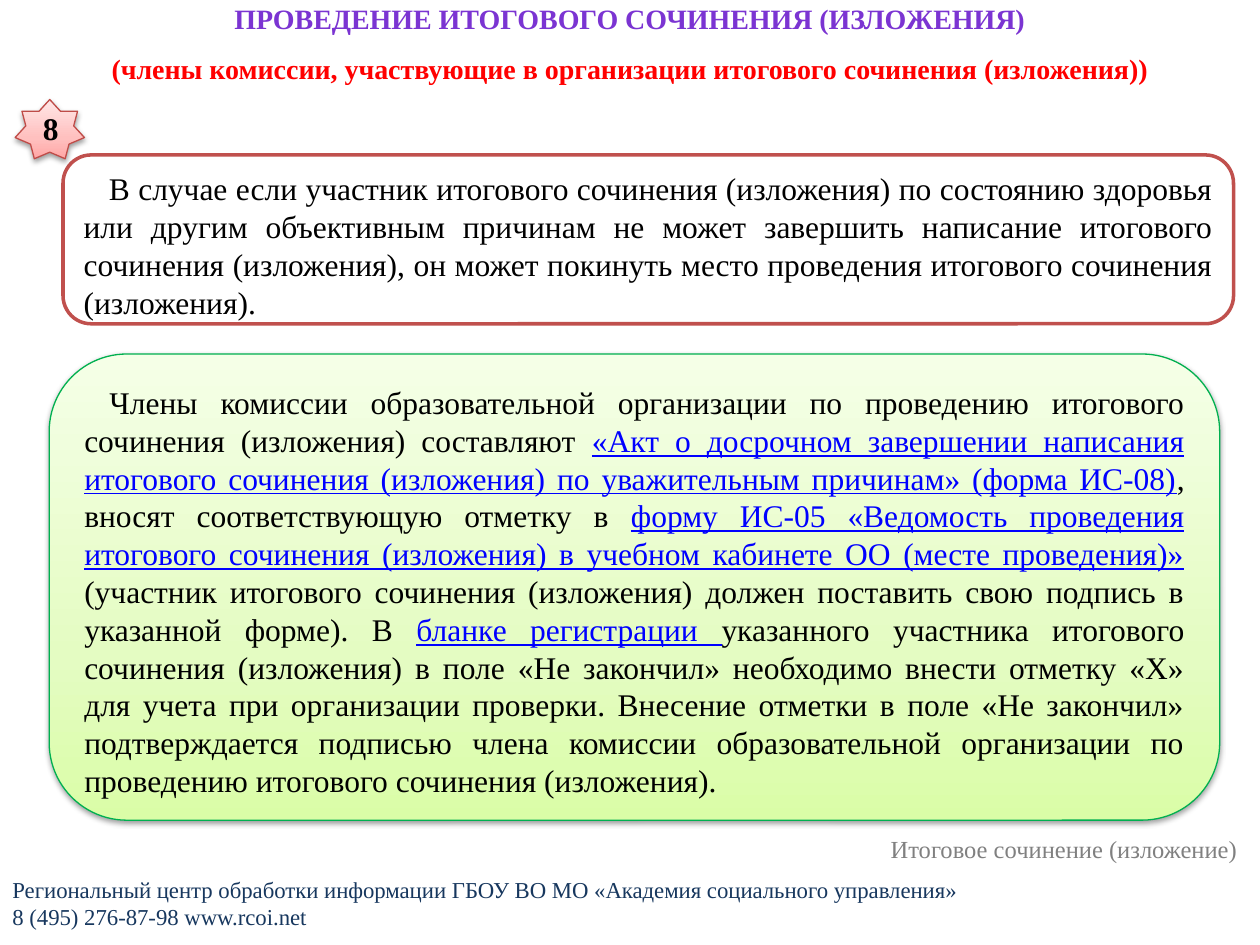
from lxml.etree import SubElement
from pptx import Presentation
from pptx.dml.color import RGBColor
from pptx.enum.shapes import MSO_SHAPE
from pptx.enum.text import MSO_ANCHOR, PP_ALIGN
from pptx.oxml.ns import qn
from pptx.util import Inches, Pt

BLACK = RGBColor(0x00, 0x00, 0x00)
WHITE = RGBColor(0xFF, 0xFF, 0xFF)
VIOLET = RGBColor(0x7B, 0x34, 0xD2)
RED = RGBColor(0xFF, 0x00, 0x00)
LINK_BLUE = RGBColor(0x00, 0x00, 0xFF)
NAVY = RGBColor(0x17, 0x37, 0x5E)
GRAY = RGBColor(0x80, 0x80, 0x80)
BRICK = RGBColor(0xC0, 0x50, 0x4D)
BADGE_EDGE = RGBColor(0xBF, 0x4C, 0x48)
GREEN = RGBColor(0x00, 0xB0, 0x50)
PINK_STOPS = [(0, "FFA6A5"), (35, "FFC0BF"), (100, "FFE7E7")]
LIME_STOPS = [(0, "DAFDA7"), (35, "E4FCC2"), (100, "F5FFE7")]

PLAIN = {"size": Pt(18), "color": BLACK}
FORM = {"size": Pt(18), "color": LINK_BLUE, "underline": True}
BADGE = {"size": Pt(18), "color": BLACK, "bold": True}
HEADING = {"size": Pt(16), "color": VIOLET, "bold": True}
SUBHEADING = {"size": Pt(16), "color": RED, "bold": True}
CONTACT = {"size": Pt(13), "color": NAVY}
TOPIC = {"size": Pt(14), "color": GRAY}

# Each text part: place (left, top, width, height), runs, paragraph settings, anchor
TEXTS = [
    ((0, 6.9, 8.61, 0.55),
     [("Региональный центр обработки информации ГБОУ ВО МО «Академия социального управления»\v"
       "8 (495) 276-87-98 www.rcoi.net", CONTACT)],
     {}, MSO_ANCHOR.TOP),
    ((6.97, 6.57, 2.99, 0.34),
     [("Итоговое сочинение (изложение)", TOPIC)],
     {}, MSO_ANCHOR.TOP),
    ((0.5, -0.07, 9, 0.7),
     [("ПРОВЕДЕНИЕ ИТОГОВОГО СОЧИНЕНИЯ (ИЗЛОЖЕНИЯ)\v", HEADING),
      ("(члены комиссии, участвующие в организации итогового сочинения (изложения))", SUBHEADING)],
     {"alignment": PP_ALIGN.CENTER, "line_spacing": 1.5}, MSO_ANCHOR.MIDDLE),
]

CASE = [
    ("В случае если участник итогового сочинения (изложения) по состоянию здоровья или другим "
     "объективным причинам не может завершить написание итогового сочинения (изложения), он может "
     "покинуть место проведения итогового сочинения (изложения).", PLAIN),
]
ACTIONS = [
    ("Члены комиссии образовательной организации по проведению итогового сочинения (изложения) "
     "составляют ", PLAIN),
    ("«Акт о досрочном завершении написания итогового сочинения (изложения) по уважительным "
     "причинам» (форма ИС-08)", FORM),
    (", вносят соответствующую отметку в ", PLAIN),
    ("форму ИС-05 «Ведомость проведения итогового сочинения (изложения) в учебном кабинете ОО "
     "(месте проведения)»", FORM),
    (" (участник итогового сочинения (изложения) должен поставить свою подпись в указанной форме). "
     "В ", PLAIN),
    ("бланке регистрации ", FORM),
    ("указанного участника итогового сочинения (изложения) в поле «Не закончил» необходимо внести "
     "отметку «Х» для учета при организации проверки. Внесение отметки в поле «Не закончил» "
     "подтверждается подписью члена комиссии образовательной организации по проведению итогового "
     "сочинения (изложения).", PLAIN),
]


def write(part, runs, settings, anchor, indent=0):
    frame = part.text_frame
    frame.word_wrap = True
    frame.vertical_anchor = anchor
    paragraph = frame.paragraphs[0]
    for name, value in settings.items():
        setattr(paragraph, name, value)
    if indent:
        properties = paragraph._p.get_or_add_pPr()
        properties.set("marL", "0")
        properties.set("indent", str(Inches(indent)))
    for text, style in runs:
        pieces = text.split("\v")
        for number, piece in enumerate(pieces):
            if number:
                paragraph.add_line_break()
            if piece:
                run = paragraph.add_run()
                run.text = piece
                run.font.name = "Times New Roman"
                for name, value in style.items():
                    if name == "color":
                        run.font.color.rgb = value
                    else:
                        setattr(run.font, name, value)


def fill_upward(shape, stops):
    """Fill with a gradient whose first stop is at the bottom."""
    shape.fill.gradient()
    shape.fill.gradient_angle = 90
    stop_list = shape._element.spPr.find(qn("a:gradFill")).find(qn("a:gsLst"))
    for old in list(stop_list):
        stop_list.remove(old)
    for percent, color in stops:
        stop = SubElement(stop_list, qn("a:gs"), pos=str(percent * 1000))
        SubElement(stop, qn("a:srgbClr"), val=color)


def drop_shadow(shape):
    effects = shape._element.spPr.find(qn("a:effectLst"))
    shadow = SubElement(effects, qn("a:outerShdw"), blurRad=str(Pt(3.1)), dist=str(Pt(1.6)),
                        dir="5400000", rotWithShape="0")
    color = SubElement(shadow, qn("a:srgbClr"), val="000000")
    SubElement(color, qn("a:alpha"), val="38000")


def add_panel(slide, preset, place, edge, edge_width, stops=None):
    """Add an outlined shape: white, or with a gradient and a shadow."""
    panel = slide.shapes.add_shape(preset, *map(Inches, place))
    panel.shadow.inherit = False
    panel.line.color.rgb = edge
    panel.line.width = Pt(edge_width)
    if stops:
        fill_upward(panel, stops)
        drop_shadow(panel)
    else:
        panel.fill.solid()
        panel.fill.fore_color.rgb = WHITE
    return panel


def main():
    deck = Presentation()
    deck.slide_width, deck.slide_height = Inches(10), Inches(7.5)
    slide = deck.slides.add_slide(deck.slide_layouts[6])

    for place, runs, settings, anchor in TEXTS:
        write(slide.shapes.add_textbox(*map(Inches, place)), runs, settings, anchor)

    justified = {"alignment": PP_ALIGN.JUSTIFY}
    centered = {"alignment": PP_ALIGN.CENTER}
    rounded = MSO_SHAPE.ROUNDED_RECTANGLE
    case = add_panel(slide, rounded, (0.5, 1.23, 9.29, 1.34), BRICK, 2)
    write(case, CASE, justified, MSO_ANCHOR.TOP, indent=0.2)
    badge = add_panel(slide, MSO_SHAPE.STAR_7_POINT, (0.12, 0.79, 0.55, 0.47),
                      BADGE_EDGE, 0.75, PINK_STOPS)
    write(badge, [("8", BADGE)], centered, MSO_ANCHOR.MIDDLE)
    actions = add_panel(slide, rounded, (0.39, 2.81, 9.29, 3.7), GREEN, 0.75, LIME_STOPS)
    write(actions, ACTIONS, justified, MSO_ANCHOR.TOP, indent=0.2)

    deck.save("out.pptx")


if __name__ == "__main__":
    main()
